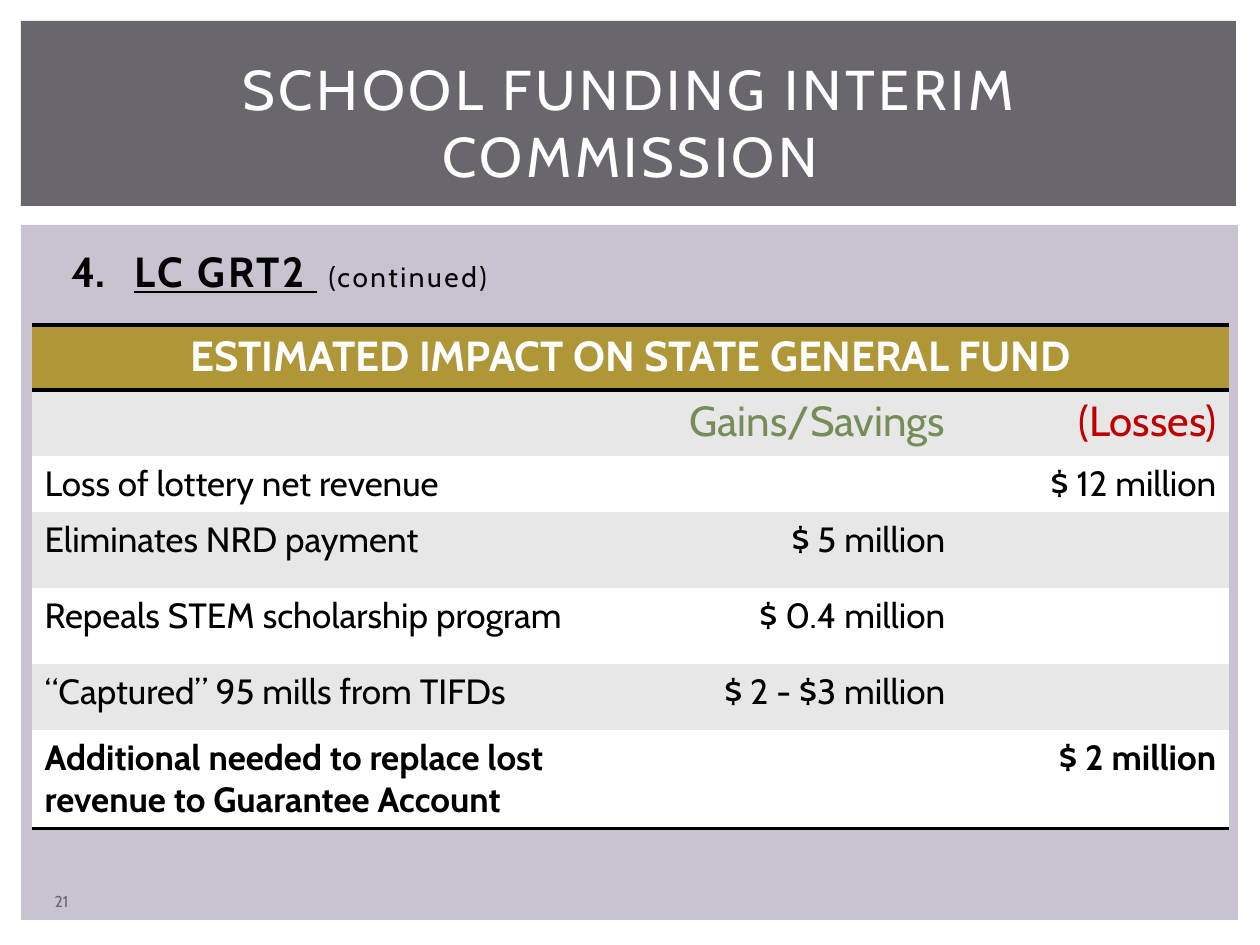
import pptx
import pptx.dml.color
import pptx.enum.shapes
import pptx.enum.text
import pptx.oxml
import pptx.oxml.ns
import pptx.util

PX = 914400 / 126
FONT = "Cabin"
COLORS = {
    "white": "FFFFFF", "black": "000000", "panel": "C9C2D1", "slate": "69676D",
    "gold": "AF9738", "band": "E7E7E7", "green": "768D5A", "red": "C00000",
}
ALIGN = pptx.enum.text.PP_ALIGN
NO_STYLE = "{2D5ABB26-0587-4C30-8999-92F81FD0307C}"

HEADING = "ESTIMATED IMPACT ON STATE GENERAL FUND"
COLUMN_WIDTHS = [625, 301, 271]
ROW_HEIGHTS = [65, 66, 56, 76, 76, 66, 99]
IMPACTS = [
    ("", "Gains/Savings", "(Losses)"),
    ("Loss of lottery net revenue", "", "$ 12 million"),
    ("Eliminates NRD payment", "$ 5 million", ""),
    ("Repeals STEM scholarship program", "$ 0.4 million", ""),
    ("“Captured” 95 mills from TIFDs", "$ 2 - $3 million", ""),
    ("Additional needed to replace lost revenue to Guarantee Account", "", "$ 2 million"),
]


def px(length):
    return pptx.util.Emu(round(length * PX))


def rgb(name):
    return pptx.dml.color.RGBColor.from_string(COLORS[name])


def format_span(span, size, color, bold=False, underline=False, spacing=0):
    span.font.name = FONT
    span.font.size = pptx.util.Pt(size)
    span.font.bold = bold
    span.font.underline = underline
    span.font.color.rgb = rgb(color)
    if spacing:
        span.font._element.set("spc", str(round(spacing * 100)))


def add_panel(page, left, top, width, height, color):
    panel = page.shapes.add_shape(pptx.enum.shapes.MSO_SHAPE.RECTANGLE,
                                  px(left), px(top), px(width), px(height))
    panel.shadow.inherit = False
    panel.fill.solid()
    panel.fill.fore_color.rgb = rgb(color)
    panel.line.fill.background()


def add_text(page, left, top, width, height, text, size, color, spacing=0):
    """Add a wrapped, centred text box and return its paragraph."""
    box = page.shapes.add_textbox(px(left), px(top), px(width), px(height))
    frame = box.text_frame
    frame.word_wrap = True
    frame.vertical_anchor = pptx.enum.text.MSO_ANCHOR.MIDDLE
    frame.text = text
    para = frame.paragraphs[0]
    para.alignment = ALIGN.CENTER
    format_span(para.runs[0], size, color, spacing=spacing)
    return para


def add_numbered_heading(page):
    para = add_text(page, 53, 237, 1158, 68, "LC GRT2 ", 24, "black")
    para.alignment = ALIGN.LEFT
    para.space_before = pptx.util.Pt(4.8)
    format_span(para.runs[0], 24, "black", bold=True, underline=True, spacing=1.5)
    span = para.add_run()
    span.text = " (continued)"
    format_span(span, 16, "black", spacing=1.5)
    # Hanging number, starting at 4
    properties = para._p.get_or_add_pPr()
    properties.set("marL", str(px(69)))
    properties.set("indent", str(px(-63)))
    properties.append(pptx.oxml.parse_xml(
        f'<a:buAutoNum {pptx.oxml.ns.nsdecls("a")} type="arabicPeriod" startAt="4"/>'))


def fill_cell(cell, text, fill, size, color, align, bold=False):
    cell.fill.solid()
    cell.fill.fore_color.rgb = rgb(fill)
    cell.text = text
    para = cell.text_frame.paragraphs[0]
    para.alignment = align
    for span in para.runs:
        format_span(span, size, color, bold)


def rule_row(table, row, sides):
    """Draw 2 pt black rules on the given sides (T, B) of a row."""
    for column in range(len(COLUMN_WIDTHS)):
        properties = table.cell(row, column)._tc.get_or_add_tcPr()
        for position, side in enumerate(sides):
            properties.insert(position, pptx.oxml.parse_xml(
                f'<a:ln{side} {pptx.oxml.ns.nsdecls("a")} w="25400"><a:solidFill>'
                f'<a:srgbClr val="{COLORS["black"]}"/></a:solidFill></a:ln{side}>'))


def add_impact_table(page):
    frame = page.shapes.add_table(len(ROW_HEIGHTS), len(COLUMN_WIDTHS), px(32), px(325),
                                  px(sum(COLUMN_WIDTHS)), px(sum(ROW_HEIGHTS)))
    table = frame.table
    table.first_row = table.horz_banding = False
    table._tbl.tblPr.find(pptx.oxml.ns.qn("a:tableStyleId")).text = NO_STYLE
    for column, width in zip(table.columns, COLUMN_WIDTHS):
        column.width = px(width)
    for row, height in zip(table.rows, ROW_HEIGHTS):
        row.height = px(height)

    # Heading across all columns
    table.cell(0, 0).merge(table.cell(0, len(COLUMN_WIDTHS) - 1))
    fill_cell(table.cell(0, 0), HEADING, "gold", 24, "white", ALIGN.CENTER, bold=True)

    # Column labels, then banded impacts with a bold last row
    for row, texts in enumerate(IMPACTS, start=1):
        fill = "band" if row % 2 or row == 5 else "white"
        fill = "white" if row % 2 == 0 else "band"
        for column, text in enumerate(texts):
            color = ("black", "green", "red")[column] if row == 1 else "black"
            fill_cell(table.cell(row, column), text, fill, 24 if row == 1 else 20, color,
                      ALIGN.RIGHT if column else ALIGN.LEFT, bold=row == len(IMPACTS))
    rule_row(table, 0, "TB")
    rule_row(table, len(IMPACTS), "B")


def main():
    deck = pptx.Presentation()
    deck.slide_width, deck.slide_height = px(1260), px(945)
    page = deck.slides.add_slide(deck.slide_layouts[6])

    # Background panels
    add_panel(page, 21, 225, 1217, 695, "panel")
    add_panel(page, 21, 21, 1215, 185, "slate")

    # Title, heading, table and page number
    add_text(page, 53, 49, 1155, 145, "SCHOOL FUNDING INTERIM COMMISSION", 32, "white", spacing=2)
    add_numbered_heading(page)
    add_impact_table(page)
    add_text(page, 21, 882, 81, 38, "21", 9, "slate")

    deck.save("out.pptx")


if __name__ == "__main__":
    main()
